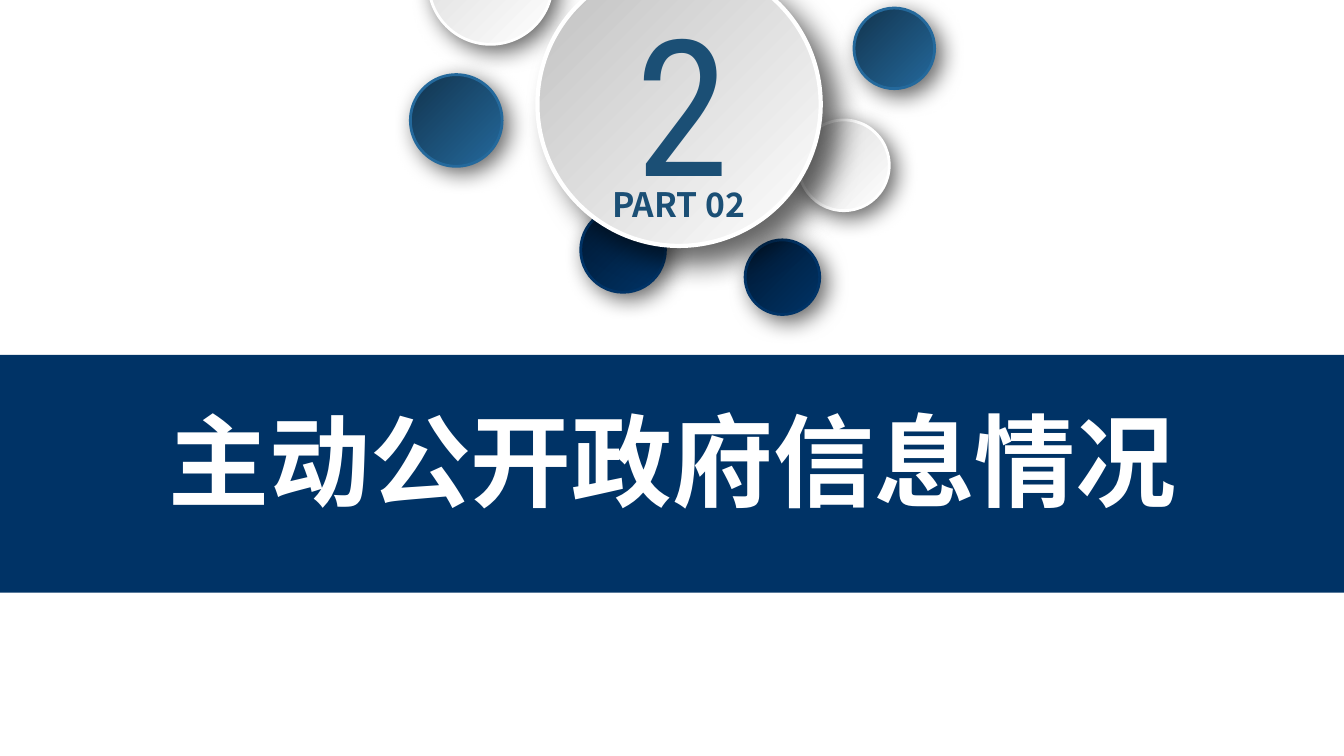
from dataclasses import dataclass

from pptx import Presentation
from pptx.dml.color import RGBColor
from pptx.enum.shapes import MSO_SHAPE
from pptx.enum.text import MSO_AUTO_SIZE, PP_ALIGN
from pptx.oxml import parse_xml
from pptx.oxml.ns import nsdecls, qn
from pptx.util import Pt

OVAL, RECT = MSO_SHAPE.OVAL, MSO_SHAPE.RECTANGLE
LEFT, CENTER = PP_ALIGN.LEFT, PP_ALIGN.CENTER
GROW = MSO_AUTO_SIZE.SHAPE_TO_FIT_TEXT
EMU_PER_PX = 9144  # 100 px to the inch
EMU_PER_PT = 12700
WIDTH, HEIGHT = 1333, 750

SANS, CONDENSED = "Noto Sans CJK SC", "Roboto Condensed"
NAVY, WHITE, TEAL = "003366", "FFFFFF", "1B4F75"
NAVY_SHADE = (NAVY, "001933")
BLUE_SHADE = ("24699C", "12344E")
PALE_SHADE = (WHITE, "D9D9D9")
GREY_SHADE = (WHITE, "BFBFBF")


@dataclass
class Disc:
    left: int
    top: int
    size: int
    shade: tuple[str, str]
    rim: int = 2
    blur: int = 16
    distance: int = 6


@dataclass
class Label:
    text: str
    left: int
    top: int
    width: int
    height: int
    size: int
    color: str
    font: str = SANS
    bold: bool = True
    align: PP_ALIGN = CENTER
    wrap: bool = True


SMALL_DISCS = [
    Disc(739, 238, 74, NAVY_SHADE),
    Disc(407, 74, 91, BLUE_SHADE),
    Disc(576, 206, 84, NAVY_SHADE),
    Disc(847, 8, 80, BLUE_SHADE),
    Disc(425, -79, 123, PALE_SHADE),
    Disc(792, 119, 90, PALE_SHADE),
]
NUMBER_DISC = Disc(533, -37, 281, GREY_SHADE, rim=3, blur=20, distance=16)
TITLE = Label("主动公开政府信息情况", 156, 391, 1022, 131, 72, WHITE)
NUMBER = Label("2", 621, -19, 104, 239, 136, TEAL, CONDENSED,
               bold=False, align=LEFT, wrap=False)
PART = Label("PART 02", 578, 178, 190, 50, 24, TEAL)


def px(value: int) -> int:
    return value * EMU_PER_PX


def rgb(color: str) -> RGBColor:
    return RGBColor.from_string(color)


def add_disc(slide, disc: Disc) -> None:
    """Draw a disc lit from the lower right, with a rim and a soft shadow."""
    s = slide.shapes.add_shape(OVAL, px(disc.left), px(disc.top), px(disc.size), px(disc.size))
    s.fill.gradient()
    s.fill.gradient_angle = 135
    for stop, color in zip(s.fill.gradient_stops, disc.shade):
        stop.color.rgb = rgb(color)
    s.line.color.rgb = rgb(disc.shade[0])
    s.line.width = Pt(disc.rim)
    s._element.spPr.append(parse_xml(
        f'<a:effectLst {nsdecls("a")}><a:outerShdw blurRad="{disc.blur * EMU_PER_PT}" '
        f'dist="{disc.distance * EMU_PER_PT}" dir="2700000" algn="tl" rotWithShape="0">'
        '<a:srgbClr val="000000"><a:alpha val="60000"/></a:srgbClr>'
        '</a:outerShdw></a:effectLst>'))


def add_band(slide, top: int, height: int, color: str) -> None:
    s = slide.shapes.add_shape(RECT, 0, px(top), px(WIDTH), px(height))
    s.shadow.inherit = False
    s.fill.solid()
    s.fill.fore_color.rgb = rgb(color)
    s.line.fill.background()


def add_label(slide, label: Label) -> None:
    s = slide.shapes.add_textbox(px(label.left), px(label.top), px(label.width), px(label.height))
    tf = s.text_frame
    tf.word_wrap = label.wrap
    tf.auto_size = GROW
    p = tf.paragraphs[0]
    p.text = label.text
    p.alignment = label.align
    p.font.size = Pt(label.size)
    p.font.bold = label.bold
    p.font.color.rgb = rgb(label.color)
    p.font.name = label.font
    east_asian = parse_xml(f'<a:ea {nsdecls("a")} typeface="{label.font}"/>')
    p._p.pPr.find(qn("a:defRPr")).append(east_asian)


def main() -> None:
    prs = Presentation()
    prs.slide_width, prs.slide_height = px(WIDTH), px(HEIGHT)
    slide = prs.slides.add_slide(prs.slide_layouts[6])
    for disc in SMALL_DISCS:
        add_disc(slide, disc)
    add_band(slide, 352, 236, NAVY)
    add_label(slide, TITLE)
    add_disc(slide, NUMBER_DISC)
    add_label(slide, NUMBER)
    add_label(slide, PART)
    prs.save("out.pptx")


if __name__ == "__main__":
    main()
